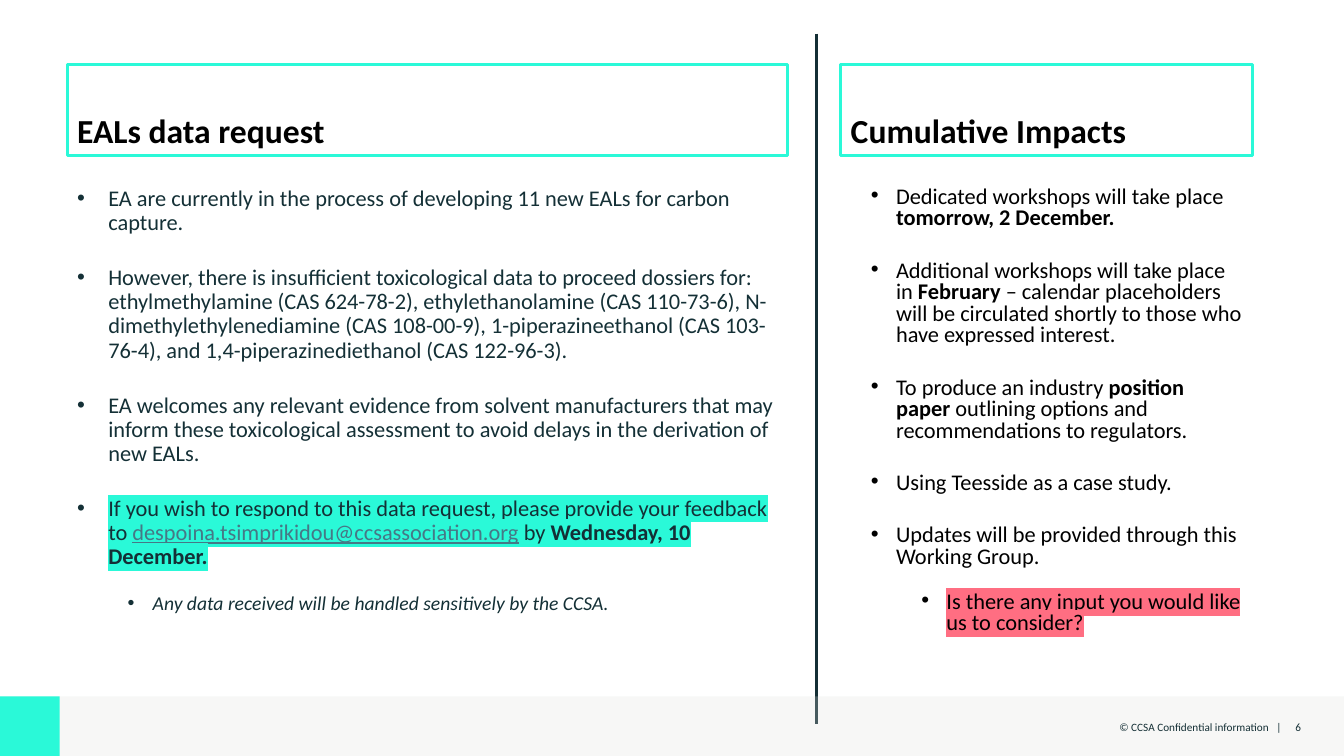
from dataclasses import dataclass
from typing import NamedTuple

from lxml.etree import SubElement
from pptx import Presentation
from pptx.dml.color import RGBColor
from pptx.enum.shapes import MSO_CONNECTOR as Connector, MSO_SHAPE as Shape
from pptx.enum.text import MSO_ANCHOR as Anchor, PP_ALIGN as Align
from pptx.oxml.ns import qn
from pptx.util import Inches, Pt


@dataclass(frozen=True)
class Theme:
    font: str = "Calibri"
    black: str = "000000"
    ink: str = "143036"
    rule: str = "142F35"
    mint: str = "2AF9D8"
    coral: str = "FF6E82"
    link: str = "467886"
    band: str = "E0E1DD"
    heading: int = 24
    body: int = 16
    note: int = 14
    footer: int = 8
    stroke: float = 2.25


class Box(NamedTuple):
    x: float
    y: float
    w: float
    h: float


T = Theme()
UNIT = Inches(1) / 12
COLS, ROWS = 160, 90


def grid(*cells):
    return [round(c * UNIT) for c in cells]


def add_run(p, text, size=T.body, color=T.ink, bold=False, italic=False,
            underline=False, highlight=None):
    r = p.add_run()
    r.text = text
    f = r.font
    f.size, f.bold, f.italic, f.underline = Pt(size), bold, italic, underline
    f.color.rgb = RGBColor.from_string(color)
    f.name = T.font
    if highlight:
        rpr = f._element
        mark = SubElement(rpr, qn("a:highlight"))
        SubElement(mark, qn("a:srgbClr"), val=highlight)
        rpr.find(qn("a:solidFill")).addnext(mark)


def add_rect(s, box, fill=None, line=None, alpha=None):
    sp = s.shapes.add_shape(Shape.RECTANGLE, *grid(*box))
    sp.shadow.inherit = False
    if fill:
        sp.fill.solid()
        sp.fill.fore_color.rgb = RGBColor.from_string(fill)
        if alpha:
            color = sp.fill._xPr.find(qn("a:solidFill"))[0]
            SubElement(color, qn("a:alpha"), val=str(alpha * 1000))
    else:
        sp.fill.background()
    if line:
        sp.line.color.rgb = RGBColor.from_string(line)
        sp.line.width = Pt(T.stroke)
    else:
        sp.line.fill.background()
    return sp


def add_text_box(s, box):
    tf = s.shapes.add_textbox(*grid(*box)).text_frame
    tf.word_wrap = True
    return tf


def add_heading(s, box, text):
    tf = add_rect(s, box, line=T.mint).text_frame
    tf.word_wrap = True
    tf.vertical_anchor = Anchor.BOTTOM
    p = tf.paragraphs[0]
    p.alignment = Align.LEFT
    p.line_spacing = 0.9
    add_run(p, text, size=T.heading, color=T.black, bold=True)


def add_bullets(s, box, items, indent, spacing, color):
    tf = add_text_box(s, box)
    for i, (level, runs) in enumerate(items):
        p = tf.paragraphs[0] if i == 0 else tf.add_paragraph()
        p.level = level
        p.line_spacing = spacing
        p.space_before = Pt(0 if i == 0 else 5 if level else 10)
        p.space_after = Pt(12)
        margin, hang = (0.75, 0.25) if level else (indent, indent)
        ppr = p._p.get_or_add_pPr()
        ppr.set("marL", str(Inches(margin)))
        ppr.set("indent", str(-Inches(hang)))
        SubElement(ppr, qn("a:buFont"), typeface="Arial")
        SubElement(ppr, qn("a:buChar"), char="•")
        for text, style in runs:
            add_run(p, text, **{"color": color, **style})


def add_column(s, box, title, items, inset=0, indent=0.25, spacing=0.9, color=T.ink):
    head, gap = 10.8, 3.2
    add_heading(s, Box(box.x, box.y, box.w, head), title)
    body = Box(box.x + inset, box.y + head + gap, box.w - inset, box.h - head - gap)
    add_bullets(s, body, items, indent, spacing, color)


def add_divider(s, box):
    line = s.shapes.add_connector(
        Connector.STRAIGHT, *grid(box.x, box.y, box.x + box.w, box.y + box.h))
    line.line.color.rgb = RGBColor.from_string(T.rule)
    line.line.width = Pt(T.stroke)
    SubElement(line._element.spPr, qn("a:effectLst"))


def add_footer(s, box, notice, number):
    add_rect(s, box, fill=T.band, alpha=25)
    add_rect(s, Box(box.x, box.y, box.h, box.h), fill=T.mint)
    top = box.y + 2.3
    right = box.x + box.w
    for text, cell, inset in ((number, Box(right - 8.7, top, 3.6, 1.8), 0),
                              (notice, Box(right - 69.3, top, 63.1, 3.1), 0.1)):
        tf = add_text_box(s, cell)
        tf.margin_right = Inches(inset)
        p = tf.paragraphs[0]
        p.alignment = Align.RIGHT
        add_run(p, text, size=T.footer, color=T.rule)


BOLD = {"bold": True}
MINT = {"highlight": T.mint}

DATA_REQUEST = [
    (0, [("EA are currently in the process of developing 11 new EALs for carbon capture.", {})]),
    (0, [("However, there is insufficient toxicological data to proceed dossiers for: "
          "ethylmethylamine (CAS 624-78-2), ethylethanolamine (CAS 110-73-6), "
          "N-dimethylethylenediamine (CAS 108-00-9), 1-piperazineethanol (CAS 103-76-4), "
          "and 1,4-piperazinediethanol (CAS 122-96-3).", {})]),
    (0, [("EA welcomes any relevant evidence from solvent manufacturers that may inform "
          "these toxicological assessment to avoid delays in the derivation of new EALs.", {})]),
    (0, [("If you wish to respond to this data request, please provide your feedback to ", MINT),
         ("despoina.tsimprikidou@ccsassociation.org",
          {**MINT, "color": T.link, "underline": True}),
         (" by ", MINT),
         ("Wednesday, 10 December.", {**MINT, **BOLD})]),
    (1, [("Any data received will be handled sensitively by the CCSA.",
          {"size": T.note, "italic": True})]),
]

IMPACTS = [
    (0, [("Dedicated workshops will take place ", {}), ("tomorrow, 2 December.", BOLD)]),
    (0, [("Additional workshops will take place in ", {}), ("February", BOLD),
         (" – calendar placeholders will be circulated shortly to those who have "
          "expressed interest.", {})]),
    (0, [("To produce an industry ", {}), ("position paper ", BOLD),
         ("outlining options and recommendations to regulators.", {})]),
    (0, [("Using Teesside as a case study.", {})]),
    (0, [("Updates will be provided through this Working Group.", {})]),
    (1, [("Is there any input you would like us to consider?", {"highlight": T.coral})]),
]


def main():
    prs = Presentation()
    prs.slide_width, prs.slide_height = grid(COLS, ROWS)
    s = prs.slides.add_slide(prs.slide_layouts[6])
    add_column(s, Box(8, 7.7, 85.8, 73.5), "EALs data request", DATA_REQUEST, indent=0.31)
    add_column(s, Box(100.1, 7.7, 49, 73.5), "Cumulative Impacts", IMPACTS,
               inset=2.4, spacing=0.8, color=T.black)
    add_divider(s, Box(97.2, 4, 0, 82.2))
    add_footer(s, Box(0, 82.9, COLS, 7.1), "© CCSA Confidential information   |", "6")
    prs.save("out.pptx")


if __name__ == "__main__":
    main()
